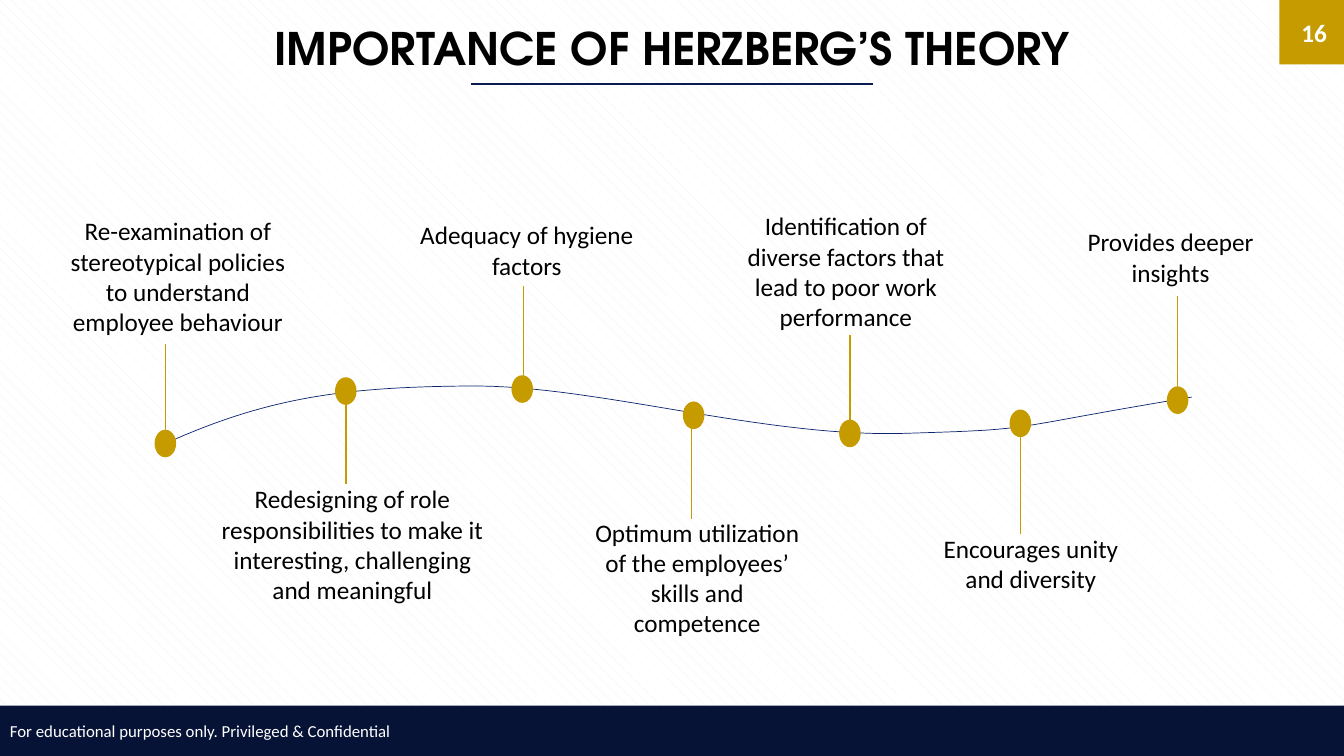
"""Build the slide on the importance of Herzberg's theory as a wavy timeline."""
import pptx
import pptx.dml.color
import pptx.enum.dml
import pptx.enum.shapes
import pptx.enum.text
import pptx.oxml
import pptx.util

Inches = pptx.util.Inches
Shapes = pptx.enum.shapes.MSO_SHAPE
Align = pptx.enum.text.PP_ALIGN
Anchor = pptx.enum.text.MSO_ANCHOR
GOLD = "C59B00"
NAVY = "061337"


def paint(color_format, color):
    color_format.rgb = pptx.dml.color.RGBColor.from_string(color)


def write(shape, text, size=18, font="Calibri", color="000000", bold=False,
          align=Align.CENTER, anchor=Anchor.TOP, inset=(0.1, 0.05)):
    frame = shape.text_frame
    frame.word_wrap = True
    frame.auto_size = pptx.enum.text.MSO_AUTO_SIZE.NONE
    frame.vertical_anchor = anchor
    frame.margin_left = frame.margin_right = Inches(inset[0])
    frame.margin_top = frame.margin_bottom = Inches(inset[1])
    paragraph = frame.paragraphs[0]
    paragraph.alignment = align
    run = paragraph.add_run()
    run.text = text
    run.font.size = pptx.util.Pt(size)
    run.font.name = font
    run.font.bold = bold
    paint(run.font.color, color)


presentation = pptx.Presentation()
presentation.slide_width = Inches(13.33)
presentation.slide_height = Inches(7.5)
slide = presentation.slides.add_slide(presentation.slide_layouts[5])
shapes = slide.shapes

background = slide.background.fill
background.patterned()
background.pattern = pptx.enum.dml.MSO_PATTERN.SHINGLE
paint(background.fore_color, "F2F2F2")
paint(background.back_color, "FFFFFF")

title = shapes.title
title.left, title.top = Inches(1.4), Inches(0.2)
title.width, title.height = Inches(10.53), Inches(0.54)
write(title, "IMPORTANCE OF HERZBERG’S THEORY", size=32, font="TeX Gyre Adventor",
      bold=True, anchor=Anchor.MIDDLE, inset=(0, 0))

footer = shapes.add_shape(Shapes.RECTANGLE, 0, Inches(7), Inches(13.33), Inches(0.5))
badge = shapes.add_shape(Shapes.RECTANGLE, Inches(12.69), 0, Inches(0.64), Inches(0.64))
for bar, color in ((footer, NAVY), (badge, GOLD)):
    bar.shadow.inherit = False
    bar.fill.solid()
    paint(bar.fill.fore_color, color)
    bar.line.fill.background()
write(footer, "For educational purposes only. Privileged & Confidential", size=12,
      color="FFFFFF", align=Align.LEFT, anchor=Anchor.MIDDLE)
number = shapes.add_textbox(Inches(12.77), Inches(0.13), Inches(0.49), Inches(0.38))
write(number, "16", color="FFFFFF", bold=True, align=Align.RIGHT, anchor=Anchor.MIDDLE)

wave_points = [
    (1.64, 4.4), (2.66, 3.94), (3.42, 3.84), (4.64, 3.83), (5.86, 3.81),
    (7.56, 4.34), (8.95, 4.3), (10.34, 4.26), (9.88, 4.26), (11.82, 3.94),
]
steps = 30
samples = []
for first in range(0, len(wave_points) - 1, 3):
    for step in range(1, steps + 1):
        t = step / steps
        weights = ((1 - t) ** 3, 3 * t * (1 - t) ** 2, 3 * t ** 2 * (1 - t), t ** 3)
        samples.append([
            Inches(sum(weight * point[axis]
                       for weight, point in zip(weights, wave_points[first:first + 4])))
            for axis in (0, 1)
        ])
builder = shapes.build_freeform(*map(Inches, wave_points[0]))
builder.add_line_segments(samples, close=False)
wave = builder.convert_to_shape()
wave.shadow.inherit = False
wave.fill.background()
paint(wave.line.color, "0B256E")
wave.line.width = pptx.util.Pt(0.5)

milestones = [
    (1.54, 4.27, 1.64, 4.45, 3.41, (0.5, 2.09, 2.53, 1.31),
     "Re-examination of stereotypical policies to understand employee behaviour"),
    (3.33, 3.75, 3.43, 3.75, 4.8, (2.09, 4.75, 2.81, 1.31),
     "Redesigning of role responsibilities to make it interesting, challenging and meaningful"),
    (5.08, 3.73, 5.19, 3.88, 2.84, (3.88, 2.13, 2.69, 0.71),
     "Adequacy of hygiene factors"),
    (6.78, 3.99, 6.86, 4.1, 5.15, (5.72, 5.08, 2.39, 1.31),
     "Optimum utilization of the employees’ skills and competence"),
    (8.33, 4.17, 8.43, 4.36, 3.32, (7.18, 2.04, 2.42, 1.31),
     "Identification of diverse factors that lead to poor work performance"),
    (10.02, 4.07, 10.12, 4.25, 5.3, (9.11, 5.24, 2.23, 0.71),
     "Encourages unity and diversity"),
    (11.58, 3.84, 11.68, 3.99, 2.94, (10.46, 2.2, 2.3, 0.71),
     "Provides deeper insights"),
]
lines = [(4.67, 0.83, 8.66, 0.83, "081C52", 1.5)]
for left, top, stem_x, stem_start, stem_end, box, text in milestones:
    dot = shapes.add_shape(Shapes.OVAL, Inches(left), Inches(top), Inches(0.2), Inches(0.26))
    dot.shadow.inherit = False
    dot.fill.solid()
    paint(dot.fill.fore_color, GOLD)
    paint(dot.line.color, GOLD)
    dot.line.width = pptx.util.Pt(1)
    lines.append((stem_x, stem_start, stem_x, stem_end, GOLD, 1))
    write(shapes.add_textbox(*map(Inches, box)), text)

for *ends, color, width in lines:
    connector = shapes.add_connector(
        pptx.enum.shapes.MSO_CONNECTOR.STRAIGHT, *map(Inches, ends))
    paint(connector.line.color, color)
    connector.line.width = pptx.util.Pt(width)
    properties = connector.element.spPr
    properties.append(properties.makeelement(pptx.oxml.ns.qn("a:effectLst"), {}))

presentation.save("out.pptx")
